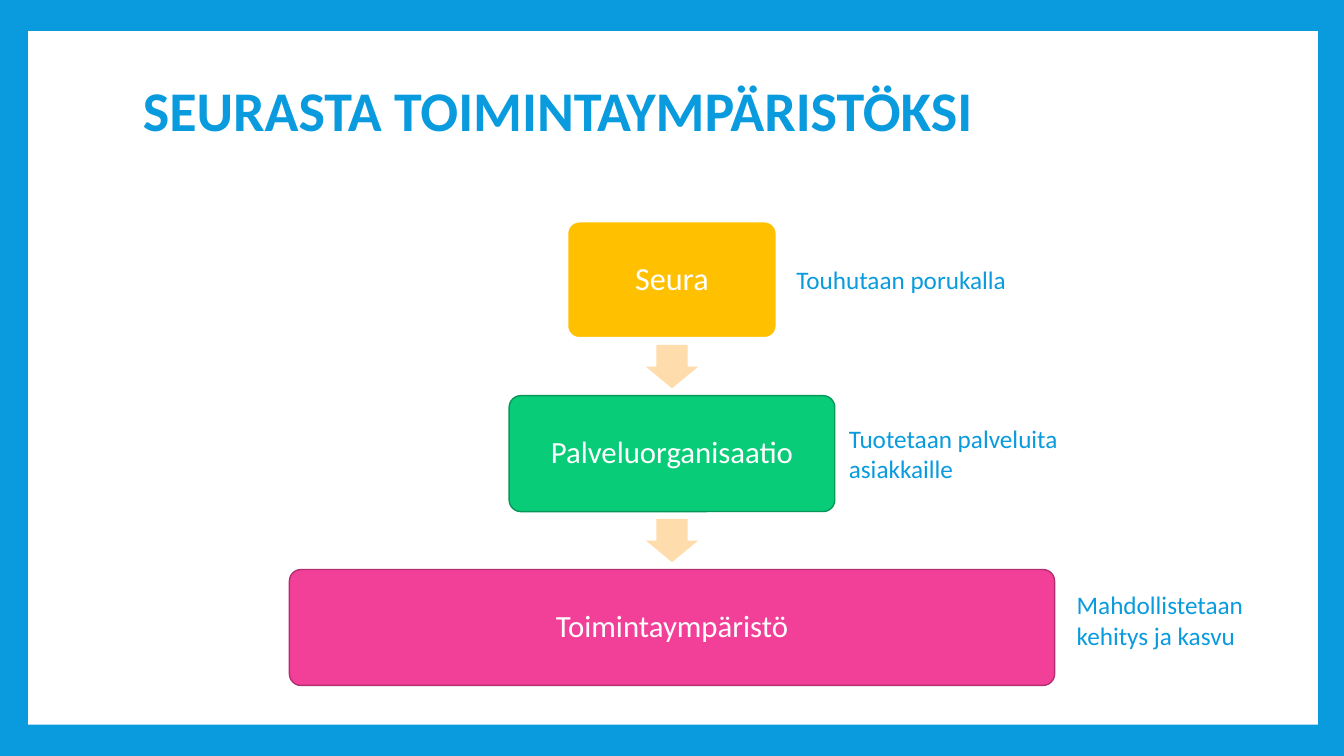
from pptx import Presentation
from pptx.dml.color import RGBColor
from pptx.enum.shapes import MSO_SHAPE
from pptx.enum.text import MSO_ANCHOR, PP_ALIGN
from pptx.util import Inches, Pt

COLORS = {
    "blue": "099BDD",
    "white": "FFFFFF",
    "yellow": "FFC000",
    "green": "08CC78",
    "dark green": "069759",
    "pink": "F24099",
    "dark pink": "B32F71",
    "peach": "FFDCAB",
}
FONT = "Calibri"

# Label, size, width, fill, outline, note, note left, note top, note height
STAGES = [
    ("Seura", 23, 2.07, "yellow", "white",
     "Touhutaan porukalla", 7.8, 2.57, 0.4),
    ("Palveluorganisaatio", 22, 3.23, "green", "dark green",
     "Tuotetaan palveluita asiakkaille", 8.32, 4.15, 0.71),
    ("Toimintaympäristö", 22, 7.59, "pink", "dark pink",
     "Mahdollistetaan kehitys ja kasvu", 10.58, 5.8, 0.71),
]
STAGE_HEIGHT = 1.15
ARROW_WIDTH, ARROW_HEIGHT = 0.52, 0.43
NOTE_WIDTH = 2.39


def color(name):
    return RGBColor.from_string(COLORS[name])


def write_text(shape, text, size, ink="blue", bold=False, align=PP_ALIGN.LEFT,
               anchor=MSO_ANCHOR.TOP, spacing=1.0):
    frame = shape.text_frame
    frame.word_wrap = True
    frame.vertical_anchor = anchor
    paragraph = frame.paragraphs[0]
    paragraph.alignment = align
    paragraph.line_spacing = spacing
    run = paragraph.add_run()
    run.text = text
    run.font.name = FONT
    run.font.size = Pt(size)
    run.font.bold = bold
    run.font.color.rgb = color(ink)


def add_text_box(slide, box, text, size, **text_format):
    text_box = slide.shapes.add_textbox(*map(Inches, box))
    write_text(text_box, text, size, **text_format)


def add_filled_shape(slide, kind, box, fill, outline=None):
    shape = slide.shapes.add_shape(kind, *map(Inches, box))
    shape.shadow.inherit = False
    shape.fill.solid()
    shape.fill.fore_color.rgb = color(fill)
    if outline:
        shape.line.color.rgb = color(outline)
        shape.line.width = Pt(1)
    else:
        shape.line.fill.background()
    return shape


def add_frame(slide, box):
    """Blue background with a white panel."""
    slide.background.fill.solid()
    slide.background.fill.fore_color.rgb = color("blue")
    add_filled_shape(slide, MSO_SHAPE.RECTANGLE, box, "white")


def add_title(slide, box):
    add_text_box(slide, box, "SEURASTA TOIMINTAYMPÄRISTÖKSI", 40, bold=True,
                 anchor=MSO_ANCHOR.MIDDLE, spacing=0.85)


def add_stages(slide, box):
    """Widening stages, evenly stacked and centred, with arrows between them."""
    left, top, width, height = box
    center = left + width / 2
    pitch = (height - STAGE_HEIGHT) / (len(STAGES) - 1)
    gap = pitch - STAGE_HEIGHT

    for index, (label, size, stage_width, fill, outline, *_) in enumerate(STAGES):
        stage_top = top + index * pitch
        # Arrow from the stage above
        if index:
            arrow_top = stage_top - (gap + ARROW_HEIGHT) / 2
            arrow = add_filled_shape(
                slide, MSO_SHAPE.DOWN_ARROW,
                (center - ARROW_WIDTH / 2, arrow_top, ARROW_WIDTH, ARROW_HEIGHT),
                "peach")
            arrow.adjustments[0] = 0.6
            arrow.adjustments[1] = 0.5
        # Stage box
        stage = add_filled_shape(
            slide, MSO_SHAPE.ROUNDED_RECTANGLE,
            (center - stage_width / 2, stage_top, stage_width, STAGE_HEIGHT),
            fill, outline)
        stage.adjustments[0] = 0.1
        write_text(stage, label, size, ink="white", align=PP_ALIGN.CENTER,
                   anchor=MSO_ANCHOR.MIDDLE, spacing=0.9)


def add_notes_beside_stages(slide):
    for *_, note, left, top, height in STAGES:
        add_text_box(slide, (left, top, NOTE_WIDTH, height), note, 18)


def main():
    presentation = Presentation()
    presentation.slide_width = Inches(13.33)
    presentation.slide_height = Inches(7.5)
    slide = presentation.slides.add_slide(presentation.slide_layouts[6])

    add_frame(slide, (0.28, 0.31, 12.79, 6.88))
    add_title(slide, (1.32, 0.31, 10.7, 1.65))
    add_stages(slide, (2.87, 2.2, 7.59, 4.6))
    add_notes_beside_stages(slide)

    presentation.save("out.pptx")


if __name__ == "__main__":
    main()
